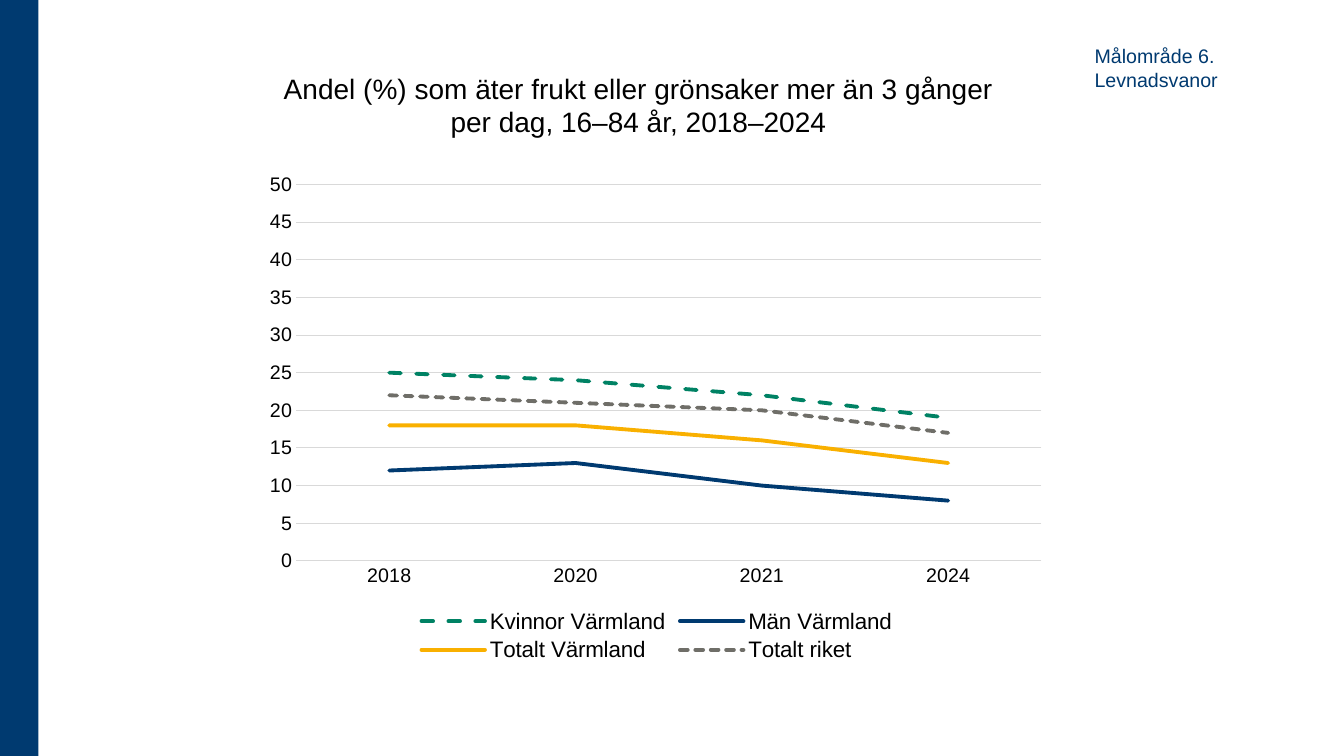
from dataclasses import dataclass
from typing import Optional

from lxml.etree import SubElement
from pptx import Presentation
from pptx.chart.data import CategoryChartData
from pptx.dml.color import RGBColor
from pptx.enum.chart import XL_CHART_TYPE, XL_LEGEND_POSITION, XL_MARKER_STYLE, XL_TICK_MARK
from pptx.enum.dml import MSO_LINE
from pptx.enum.shapes import MSO_SHAPE
from pptx.enum.text import MSO_ANCHOR, PP_ALIGN
from pptx.oxml.ns import qn
from pptx.util import Pt

FONT = "Arial"
NAVY = "003A70"
BLACK = "000000"
GRID_GREY = "D9D9D9"
YEARS = ["2018", "2020", "2021", "2024"]


@dataclass
class Box:
    left: float
    top: float
    width: float
    height: float

    def lengths(self) -> tuple:
        return Pt(self.left), Pt(self.top), Pt(self.width), Pt(self.height)


@dataclass
class TrendLine:
    name: str
    shares: list[int]
    color: str
    dash: Optional[MSO_LINE] = None


TREND_LINES = [
    TrendLine("Kvinnor Värmland", [25, 24, 22, 19], "008264", MSO_LINE.DASH),
    TrendLine("Män Värmland", [12, 13, 10, 8], NAVY),
    TrendLine("Totalt Värmland", [18, 18, 16, 13], "F9B000"),
    TrendLine("Totalt riket", [22, 21, 20, 17], "6F6E68", MSO_LINE.SQUARE_DOT),
]


def rgb(color: str) -> RGBColor:
    return RGBColor.from_string(color)


def format_font(font, size: float, color: str = BLACK) -> None:
    font.name = FONT
    font.size = Pt(size)
    font.color.rgb = rgb(color)


def format_line(line, color: str, width: float) -> None:
    line.color.rgb = rgb(color)
    line.width = Pt(width)


def add_text(slide, box: Box, text: str, *, size: float, color: str = BLACK,
             align=PP_ALIGN.LEFT, anchor=MSO_ANCHOR.TOP) -> None:
    frame = slide.shapes.add_textbox(*box.lengths()).text_frame
    frame.word_wrap = True
    frame.vertical_anchor = anchor
    frame.text = text
    for paragraph in frame.paragraphs:
        paragraph.alignment = align
        for run in paragraph.runs:
            format_font(run.font, size, color)


def add_side_band(slide, box: Box) -> None:
    shape = slide.shapes.add_shape(MSO_SHAPE.RECTANGLE, *box.lengths())
    shape.shadow.inherit = False
    shape.fill.solid()
    shape.fill.fore_color.rgb = rgb(NAVY)
    shape.line.fill.background()


def place_plot_area(chart, x: float, y: float, width: float, height: float) -> None:
    plot_area = chart.element.find(f".//{qn('c:plotArea')}")
    for layout in plot_area.findall(qn("c:layout")):
        plot_area.remove(layout)
    layout = SubElement(plot_area, qn("c:layout"))
    plot_area.insert(0, layout)
    manual = SubElement(layout, qn("c:manualLayout"))
    settings = {"layoutTarget": "inner", "xMode": "edge", "yMode": "edge",
                "x": x, "y": y, "w": width, "h": height}
    for tag, value in settings.items():
        SubElement(manual, qn(f"c:{tag}")).set("val", str(value))


def format_axes(chart) -> None:
    for axis in (chart.category_axis, chart.value_axis):
        axis.major_tick_mark = XL_TICK_MARK.NONE
        axis.minor_tick_mark = XL_TICK_MARK.NONE
        format_font(axis.tick_labels.font, 14)
    format_line(chart.category_axis.format.line, GRID_GREY, 0.75)
    value_axis = chart.value_axis
    value_axis.minimum_scale = 0
    value_axis.maximum_scale = 50
    value_axis.major_unit = 5
    value_axis.tick_labels.number_format = "0"
    value_axis.tick_labels.number_format_is_linked = False
    value_axis.format.line.fill.background()
    value_axis.has_major_gridlines = True
    format_line(value_axis.major_gridlines.format.line, GRID_GREY, 0.75)


def add_trend_chart(slide, box: Box) -> None:
    data = CategoryChartData(number_format="0")
    data.categories = YEARS
    for trend in TREND_LINES:
        data.add_series(trend.name, trend.shares)
    chart = slide.shapes.add_chart(XL_CHART_TYPE.LINE, *box.lengths(), data).chart
    chart.has_title = False
    format_font(chart.font, 10)
    format_axes(chart)
    chart.has_legend = True
    chart.legend.position = XL_LEGEND_POSITION.BOTTOM
    chart.legend.include_in_layout = False
    format_font(chart.legend.font, 16)
    plot = chart.plots[0]
    plot.vary_by_categories = False
    for series, trend in zip(plot.series, TREND_LINES):
        series.smooth = False
        series.marker.style = XL_MARKER_STYLE.NONE
        format_line(series.format.line, trend.color, 2.75)
        if trend.dash:
            series.format.line.dash_style = trend.dash
    for outline in chart.element.findall(f".//{qn('c:ser')}/{qn('c:spPr')}/{qn('a:ln')}"):
        outline.set("cap", "rnd")
    place_plot_area(chart, 0.05, 0.04, 0.93, 0.75)


def main() -> None:
    presentation = Presentation()
    presentation.slide_width = Pt(960)
    presentation.slide_height = Pt(540)
    slide = presentation.slides.add_slide(presentation.slide_layouts[6])
    add_side_band(slide, Box(0, 0, 27.4, 540))
    add_text(slide, Box(190.8, 16.6, 530.6, 85.7),
             "Andel (%) som äter frukt eller grönsaker mer än 3 gånger per dag, 16–84 år, 2018–2024",
             size=20, align=PP_ALIGN.CENTER, anchor=MSO_ANCHOR.BOTTOM)
    add_text(slide, Box(774.7, 28.1, 159.1, 41), "Målområde 6.\nLevnadsvanor", size=14, color=NAVY)
    add_trend_chart(slide, Box(182.9, 117.4, 572.4, 358.6))
    presentation.save("out.pptx")


if __name__ == "__main__":
    main()
